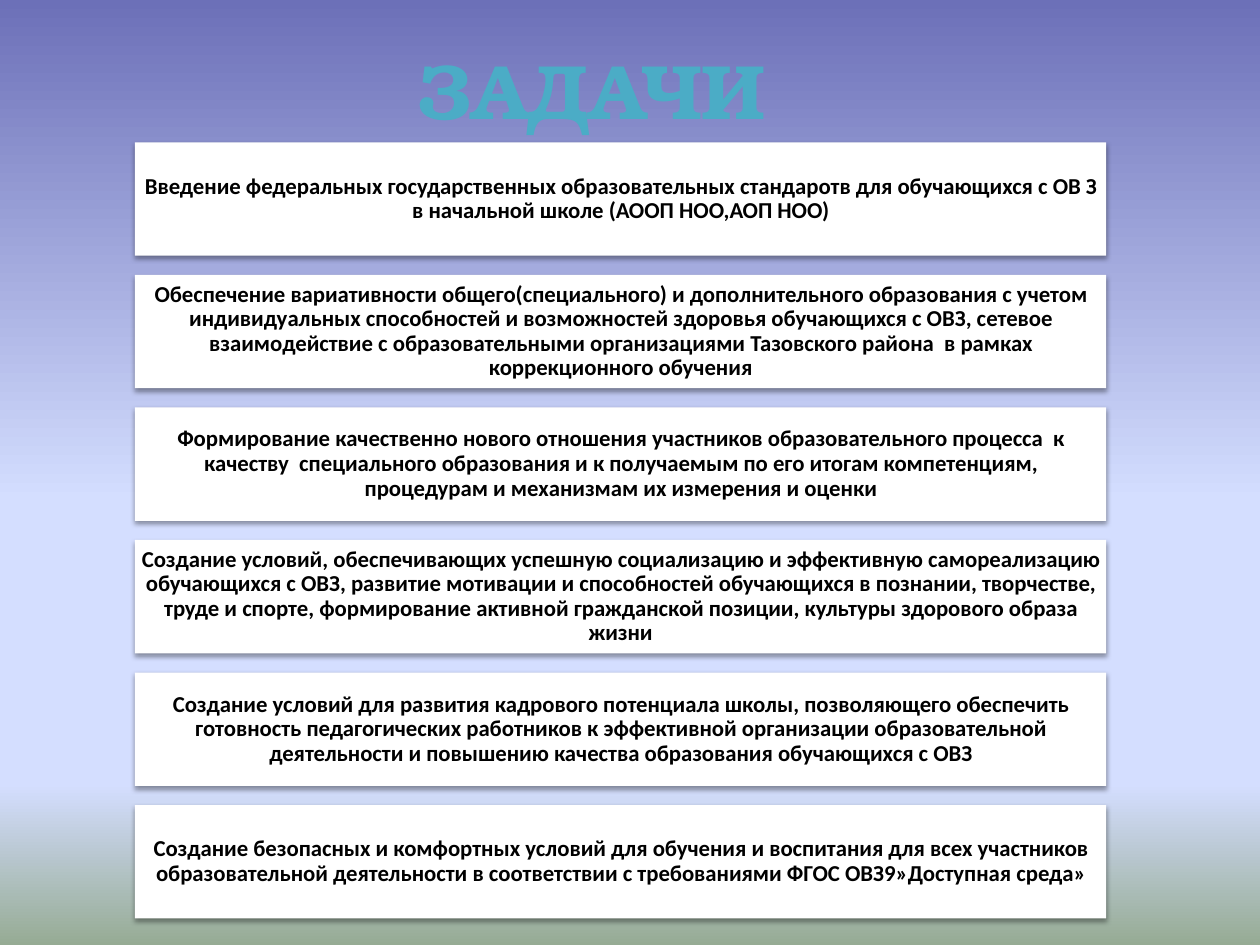
from lxml import etree
from pptx import Presentation
from pptx.dml.color import RGBColor
from pptx.enum.shapes import MSO_SHAPE
from pptx.enum.text import MSO_ANCHOR, MSO_AUTO_SIZE, PP_ALIGN
from pptx.oxml import parse_xml
from pptx.oxml.ns import nsdecls, qn
from pptx.util import Inches, Pt

COLORS = {
    "sky_top": "6C70B8",
    "sky": "D4DEFF",
    "ground": "96AB94",
    "card": "FFFFFF",
    "text": "000000",
    "title": "4BACC6",
    "outline": "FFFFFF",
}
GRADIENT = [(0, "sky_top"), (53, "sky"), (83, "sky"), (100, "ground")]

TASKS = [
    "Введение федеральных государственных образовательных стандаротв для "
    "обучающихся с ОВ З в начальной школе (АООП НОО,АОП НОО)",
    "Обеспечение вариативности общего(специального) и дополнительного образования "
    "с учетом индивидуальных способностей и возможностей здоровья обучающихся с ОВЗ, "
    "сетевое взаимодействие с образовательными организациями Тазовского района  "
    "в рамках коррекционного обучения",
    "Формирование качественно нового отношения участников образовательного процесса  "
    "к качеству  специального образования и к получаемым по его итогам компетенциям, "
    "процедурам и механизмам их измерения и оценки",
    "Создание условий, обеспечивающих успешную социализацию и эффективную "
    "самореализацию обучающихся с ОВЗ, развитие мотивации и способностей обучающихся "
    "в познании, творчестве, труде и спорте, формирование активной гражданской "
    "позиции, культуры здорового образа жизни",
    "Создание условий для развития кадрового потенциала школы, позволяющего "
    "обеспечить готовность педагогических работников к эффективной организации "
    "образовательной деятельности и повышению качества образования обучающихся с ОВЗ",
    "Создание безопасных и комфортных условий для обучения и воспитания для всех "
    "участников образовательной деятельности в соответствии с требованиями "
    "ФГОС ОВЗ9»Доступная среда»",
]
CARD_LEFT, CARD_TOP, CARD_WIDTH, CARD_HEIGHT = 1.07, 1.13, 7.71, 0.9
CARD_STEP = 1.052


def rgb(name):
    return RGBColor.from_string(COLORS[name])


def set_font(font, name, size, color):
    font.name, font.size, font.bold = name, Pt(size), True
    font.color.rgb = rgb(color)


def add_background(s):
    """Fill the slide with a vertical gradient of several stops."""
    fill = s.background.fill
    fill.gradient()
    fill.gradient_angle = 270
    stops = s.element.find(".//" + qn("a:gsLst"))
    for stop in list(stops):
        stops.remove(stop)
    for percent, color in GRADIENT:
        gs = etree.SubElement(stops, qn("a:gs"), pos=str(percent * 1000))
        etree.SubElement(gs, qn("a:srgbClr"), val=COLORS[color])


def add_shadow(sp):
    """Give the shape a soft shadow that falls straight down."""
    sp.shadow.inherit = False
    effects = sp._element.spPr.find(qn("a:effectLst"))
    effects.append(parse_xml(
        f'<a:outerShdw {nsdecls("a")} blurRad="{Pt(3.1)}" dist="{Pt(1.6)}" '
        'dir="5400000" rotWithShape="0">'
        f'<a:srgbClr val="{COLORS["text"]}"><a:alpha val="38000"/></a:srgbClr>'
        '</a:outerShdw>'))


def add_card(s, top, text):
    sp = s.shapes.add_shape(MSO_SHAPE.RECTANGLE, Inches(CARD_LEFT), Inches(top),
                            Inches(CARD_WIDTH), Inches(CARD_HEIGHT))
    sp.fill.solid()
    sp.fill.fore_color.rgb = rgb("card")
    sp.line.fill.background()
    add_shadow(sp)
    tf = sp.text_frame
    tf.word_wrap = True
    tf.vertical_anchor = MSO_ANCHOR.MIDDLE
    tf.margin_left = tf.margin_right = Inches(0.05)
    tf.margin_top = tf.margin_bottom = Inches(0.05)
    p = tf.paragraphs[0]
    p.text = text
    p.alignment = PP_ALIGN.CENTER
    p.line_spacing = 0.9
    set_font(p.font, "Calibri", 13, "text")


def add_title(s, text):
    tf = s.shapes.add_textbox(Inches(3.19), Inches(0.29),
                              Inches(3.23), Inches(0.84)).text_frame
    tf.word_wrap = False
    tf.auto_size = MSO_AUTO_SIZE.SHAPE_TO_FIT_TEXT
    p = tf.paragraphs[0]
    p.alignment = PP_ALIGN.CENTER
    r = p.add_run()
    r.text = text
    set_font(r.font, "TeX Gyre Bonum", 44, "title")
    r.font._element.insert(0, parse_xml(
        f'<a:ln {nsdecls("a")} w="{Pt(0.75)}"><a:solidFill>'
        f'<a:srgbClr val="{COLORS["outline"]}"/></a:solidFill></a:ln>'))


def main():
    prs = Presentation()
    prs.slide_width, prs.slide_height = Inches(10), Inches(7.5)
    s = prs.slides.add_slide(prs.slide_layouts[6])
    add_background(s)
    for i, task in enumerate(TASKS):
        add_card(s, CARD_TOP + i * CARD_STEP, task)
    add_title(s, "ЗАДАЧИ ")
    prs.save("out.pptx")


if __name__ == "__main__":
    main()
